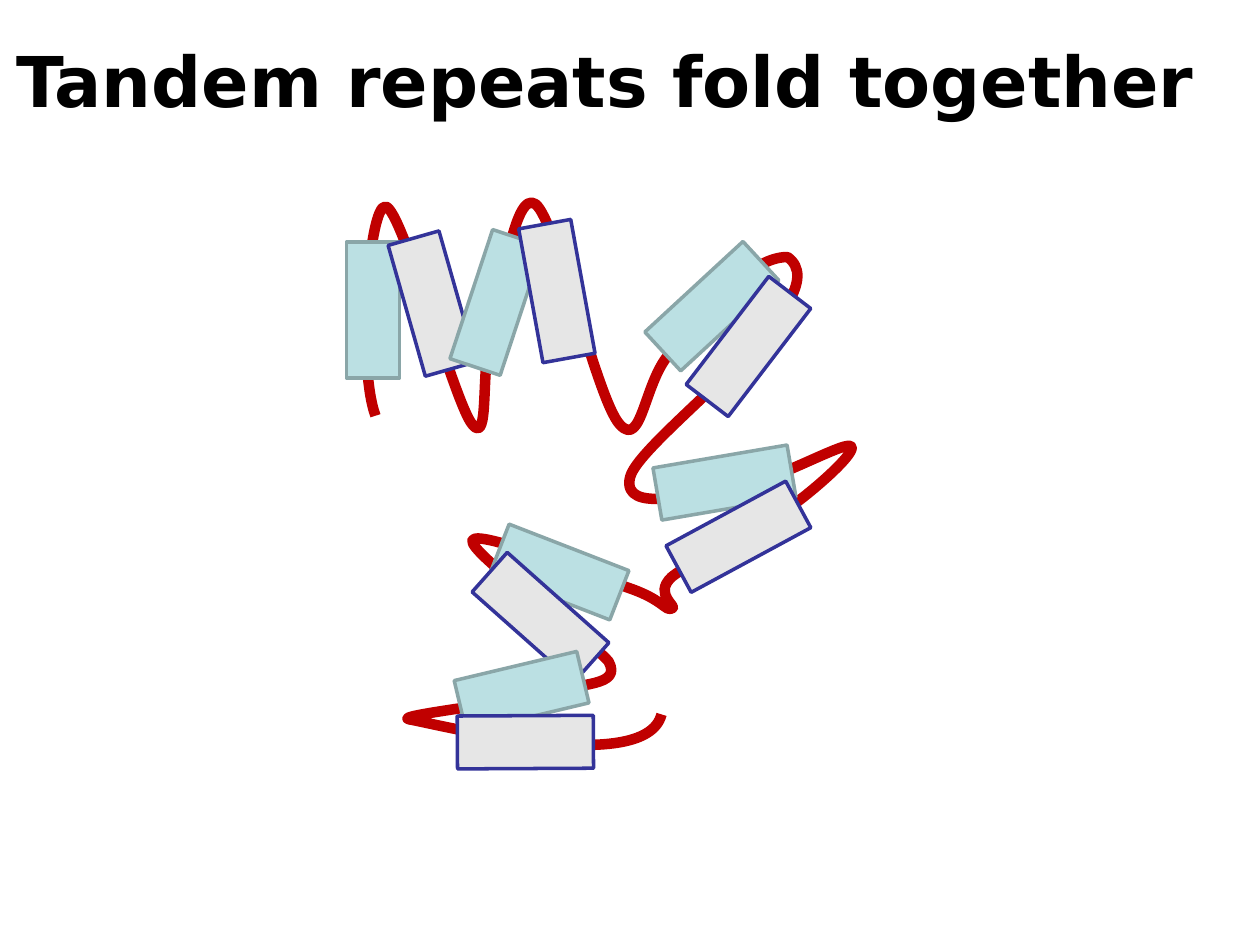
"""Draw a chain of paired helices that fold together along one loop."""
from dataclasses import dataclass
from itertools import cycle

from lxml import etree
from pptx import Presentation
from pptx.dml.color import RGBColor
from pptx.enum.shapes import MSO_SHAPE
from pptx.enum.text import MSO_ANCHOR, MSO_AUTO_SIZE, PP_ALIGN
from pptx.oxml.ns import qn
from pptx.util import Inches, Pt

RECT = MSO_SHAPE.RECTANGLE
CENTER = PP_ALIGN.CENTER
MIDDLE = MSO_ANCHOR.MIDDLE
GROW = MSO_AUTO_SIZE.SHAPE_TO_FIT_TEXT
WIDE, HIGH = Inches(10), Inches(7.5)
COL, ROW = WIDE / 10, HIGH / 7.5
THICK = 0.42


@dataclass(frozen=True)
class Style:
    fill: str
    line: str


@dataclass(frozen=True)
class Helix:
    left: float
    top: float
    turn: float
    length: float = 1.08


STYLES = (Style("BBE0E3", "8AA6A8"), Style("E6E6E6", "333399"))
HELICES = (
    Helix(2.42, 2.25, 270), Helix(2.89, 2.2, 74.1),
    Helix(3.4, 2.19, 288.3), Helix(3.88, 2.1, 79.7),
    Helix(5.12, 2.22, 317.3, 1.06), Helix(5.4, 2.54, 127.4),
    Helix(5.21, 3.62, 350.3), Helix(5.32, 4.05, 151.6),
    Helix(3.93, 4.33, 21.2, 1.02), Helix(3.75, 4.69, 41.6),
    Helix(3.64, 5.28, 346.6, 1), Helix(3.63, 5.68, 359.7),
)
START = (2.98, 3.3)
BENDS = (
    ((2.83, 2.89), (2.93, 1.62), (3.06, 1.64)),
    ((3.19, 1.65), (3.61, 3.21), (3.75, 3.37)),
    ((3.89, 3.54), (3.81, 2.93), (3.9, 2.64)),
    ((3.98, 2.34), (4.08, 1.5), (4.25, 1.62)),
    ((4.42, 1.75), (4.74, 3.18), (4.92, 3.37)),
    ((5.1, 3.57), (5.11, 3.01), (5.33, 2.79)),
    ((5.56, 2.57), (5.91, 2.04), (6.25, 2.04)),
    ((6.7, 2.36), (5.07, 3.48), (5, 3.79)),
    ((4.93, 4.09), (5.54, 3.91), (5.83, 3.87)),
    ((6.13, 3.83), (6.68, 3.51), (6.75, 3.54)),
    ((6.82, 3.57), (6.49, 3.87), (6.25, 4.04)),
    ((6.01, 4.21), (5.49, 4.45), (5.33, 4.58)),
    ((5.18, 4.72), (5.39, 4.82), (5.33, 4.83)),
    ((5.28, 4.85), (5.26, 4.76), (5, 4.67)),
    ((4.74, 4.58), (3.78, 4.19), (3.75, 4.29)),
    ((3.72, 4.39), (4.67, 5.06), (4.83, 5.25)),
    ((4.94, 5.45), (4.6, 5.42), (4.33, 5.5)),
    ((4.07, 5.58), (3.1, 5.68), (3.25, 5.71)),
    ((3.4, 5.73), (5.12, 6.18), (5.25, 5.67)),
)


def hue(code: str) -> RGBColor:
    return RGBColor.from_string(code)


def put(item, form: dict) -> None:
    for name, value in form.items():
        setattr(item, name, value)


def place(left: float, top: float, wide: float, high: float) -> dict:
    return {"left": round(left * COL), "top": round(top * ROW),
            "width": round(wide * COL), "height": round(high * ROW)}


def edge(shape, code: str, size: float) -> None:
    shape.shadow.inherit = False
    shape.line.color.rgb = hue(code)
    shape.line.width = Pt(size)


def draw_loop(slide) -> None:
    pen = slide.shapes.build_freeform(
        round(START[0] * COL), round(START[1] * ROW))
    pen.add_line_segments(
        [(round(x * COL), round(y * ROW)) for bend in BENDS for x, y in bend],
        close=False)
    loop = pen.convert_to_shape()
    loop.fill.background()
    edge(loop, "C00000", 6)
    steps = list(loop._element.iter(qn("a:lnTo")))
    track = steps[0].getparent()
    for i in range(0, len(steps), 3):
        curve = etree.SubElement(track, qn("a:cubicBezTo"))
        for step in steps[i:i + 3]:
            curve.append(step[0])
            track.remove(step)


def draw_helix(slide, helix: Helix, style: Style) -> None:
    box = place(helix.left, helix.top, helix.length, THICK)
    shape = slide.shapes.add_shape(RECT, *box.values())
    shape.rotation = helix.turn
    shape.fill.solid()
    shape.fill.fore_color.rgb = hue(style.fill)
    edge(shape, style.line, 2)


def set_title(slide, words: str) -> None:
    title = slide.shapes.title
    put(title, place(0, 0.25, 9.6, 0.77))
    frame = title.text_frame
    frame.text = words
    put(frame, {"word_wrap": False, "auto_size": GROW,
                "vertical_anchor": MIDDLE})
    para = frame.paragraphs[0]
    para.alignment = CENTER
    font = para.runs[0].font
    put(font, {"name": "DejaVu Sans", "size": Pt(40), "bold": True})
    font.color.rgb = hue("000000")


def main() -> None:
    deck = Presentation()
    put(deck, {"slide_width": WIDE, "slide_height": HIGH})
    slide = deck.slides.add_slide(deck.slide_layouts[5])
    set_title(slide, "Tandem repeats fold together")
    draw_loop(slide)
    for helix, style in zip(HELICES, cycle(STYLES)):
        draw_helix(slide, helix, style)
    deck.save("out.pptx")


if __name__ == "__main__":
    main()
